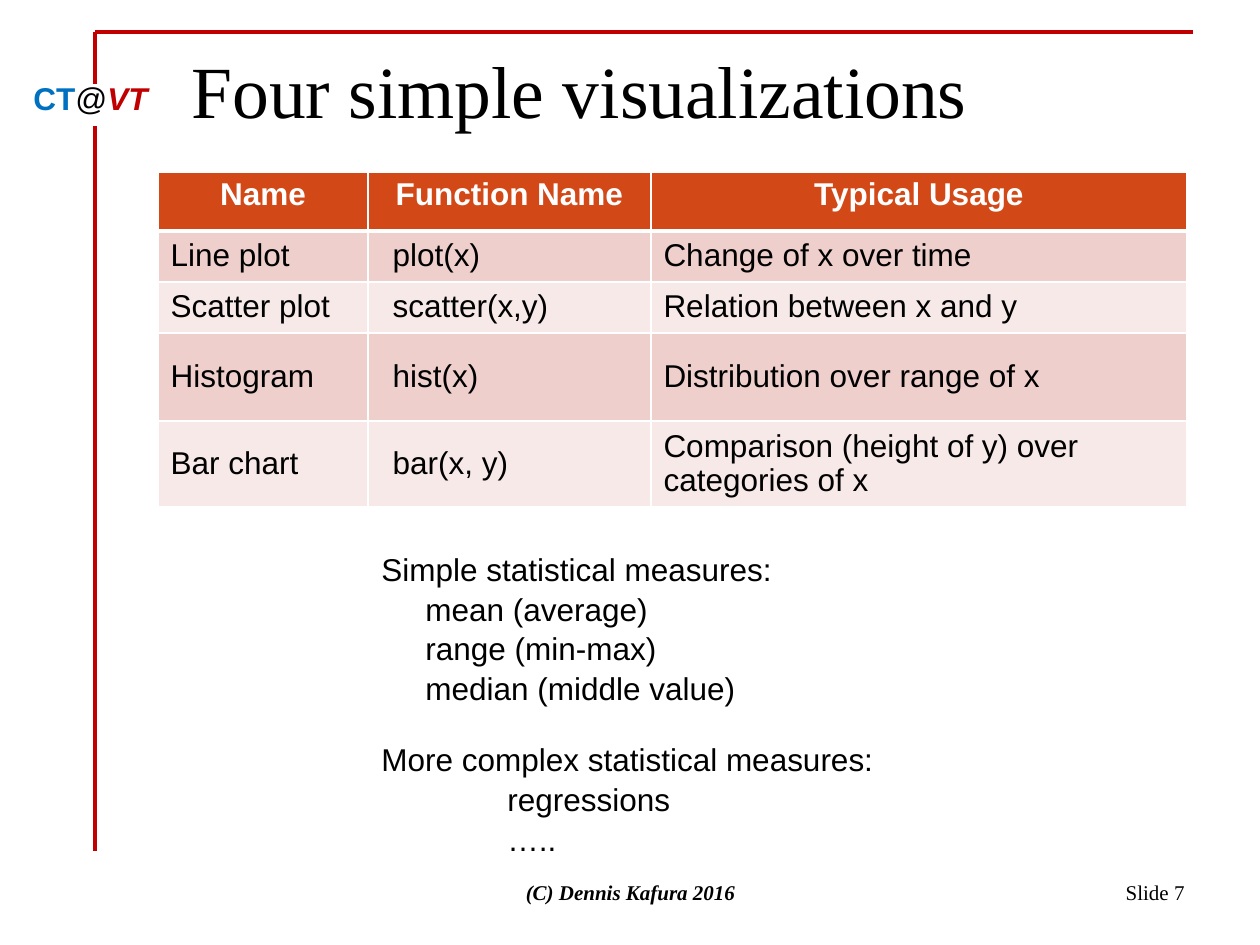
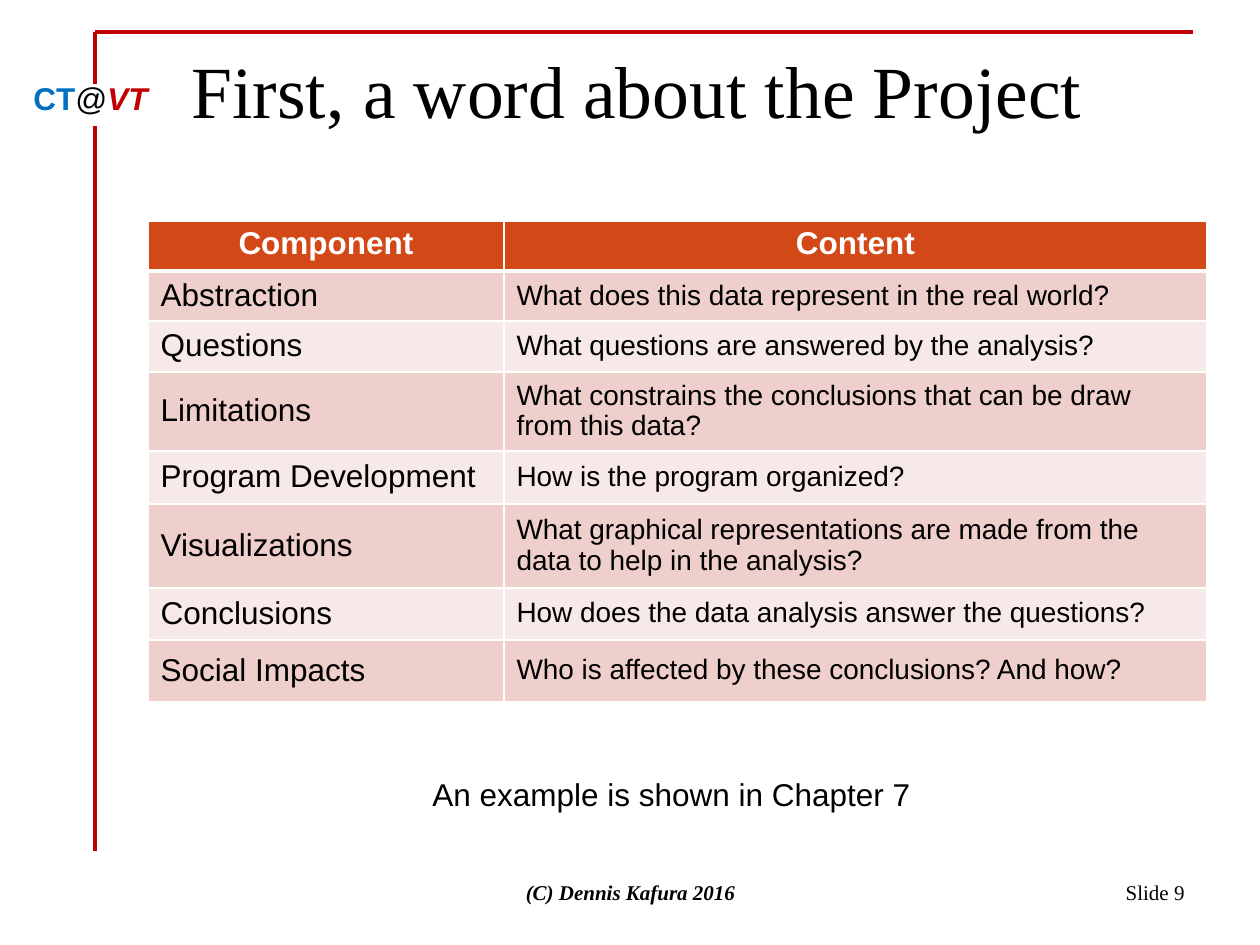
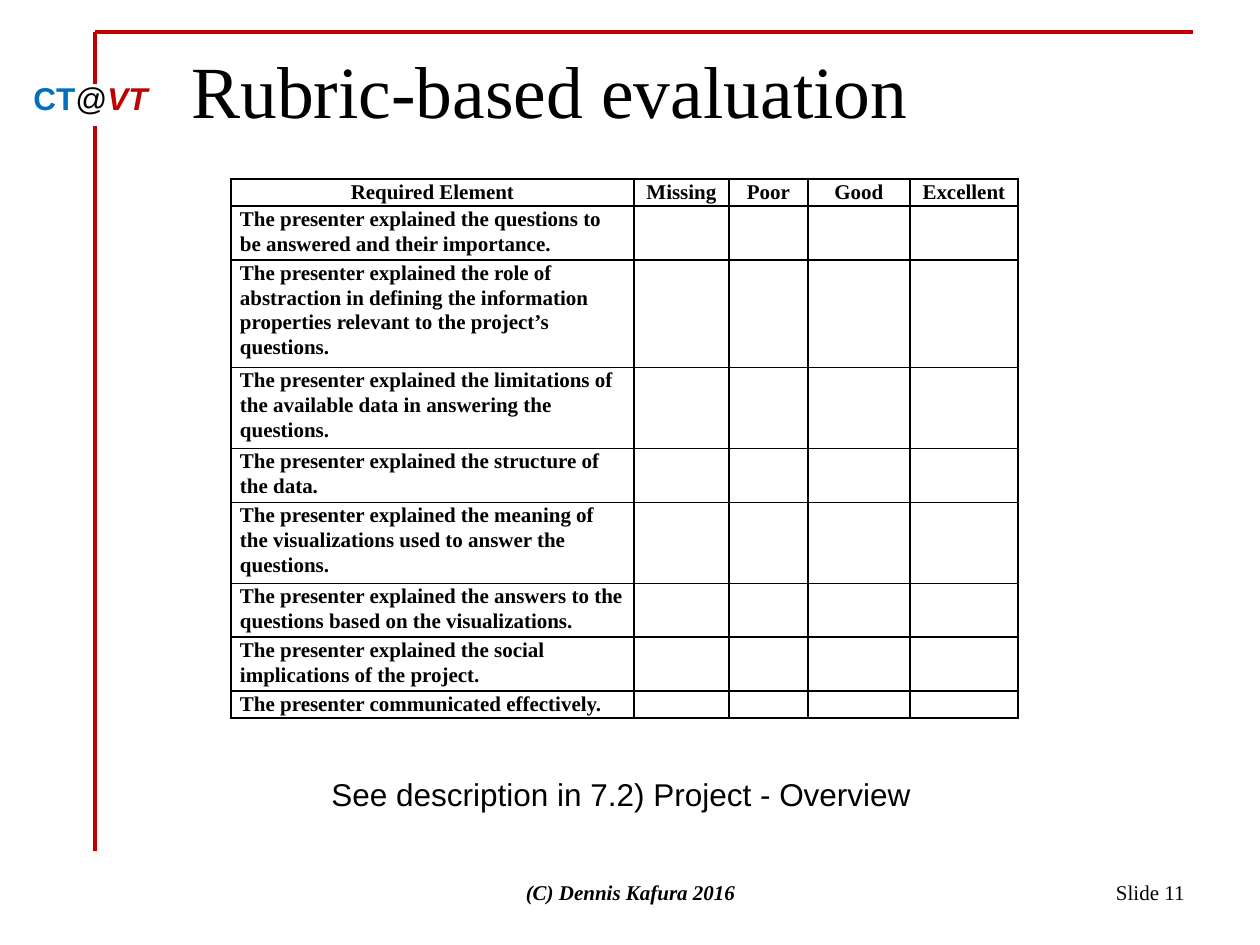
from lxml.etree import SubElement
from pptx import Presentation
from pptx.dml.color import RGBColor
from pptx.enum.shapes import MSO_CONNECTOR
from pptx.enum.text import MSO_ANCHOR, MSO_AUTO_SIZE, PP_ALIGN
from pptx.oxml.ns import qn
from pptx.util import Emu, Pt

COLORS = {"red": "C00000", "blue": "0070C0", "black": "000000", "white": "FFFFFF",
          "header": "D34817", "odd": "EFCFCC", "even": "F7E9E8"}
SANS, SERIF = "Arial", "Times New Roman"
FOOTER = "(C) Dennis Kafura 2016"
FRAME_LINES = [(95, 32, 1193, 32, 2), (95, 32, 95, 84, 1.75), (95, 126, 95, 851, 1.75)]
BADGE = [("CT", dict(color="blue", bold=True)), ("@", {}),
         ("VT", dict(color="red", bold=True, italic=True))]

PLOTS = dict(
    left=158, top=172, cols=[210, 283, 536], rows=[59, 51, 51, 88, 83],
    formats=[{}, dict(indent=12), {}],
    cells=[("Name", "Function Name", "Typical Usage"),
           ("Line plot", "plot(x)", "Change of x over time"),
           ("Scatter plot", "scatter(x,y)", "Relation between x and y"),
           ("Histogram", "hist(x)", "Distribution over range of x"),
           ("Bar chart", "bar(x, y)", "Comparison (height of y) over categories of x")])
COMPONENTS = dict(
    left=148, top=221, cols=[356, 703], rows=[50, 50, 51, 79, 53, 84, 52, 62],
    formats=[{}, dict(size=16)],
    cells=[("Component", "Content"),
           ("Abstraction", "What does this data represent in the real world?"),
           ("Questions", "What questions are answered by the analysis?"),
           ("Limitations", "What constrains the conclusions that can be draw from this data?"),
           ("Program Development", "How is the program organized?"),
           ("Visualizations", "What graphical representations are made from the data "
                              "to help in the analysis?"),
           ("Conclusions", "How does the data analysis answer the questions?"),
           ("Social Impacts", "Who is affected by these conclusions? And how?")])
GRADES = ("Required Element", "Missing", "Poor", "Good", "Excellent")
CRITERIA = [
    ("The presenter explained the questions to be answered and their importance.", 2),
    ("The presenter explained the role of abstraction in defining the information "
     "properties relevant to the project’s questions.", 4),
    ("The presenter explained the limitations of the available data in answering "
     "the questions.", 3),
    ("The presenter explained the structure of the data.", 2),
    ("The presenter explained the meaning of the visualizations used to answer "
     "the questions.", 3),
    ("The presenter explained the answers to the questions based on the visualizations.", 2),
    ("The presenter explained the social implications of the project.", 2),
    ("The presenter communicated effectively.", 1)]
RUBRIC = dict(
    left=231, top=179, cols=[403, 95, 79, 102, 108],
    rows=[25] + [25 * lines for _, lines in CRITERIA],
    cells=[GRADES] + [(criterion, "", "", "", "") for criterion, _ in CRITERIA])

MEASURES = [("Simple statistical measures:", {}),
            ("mean (average)", dict(indent=44)),
            ("range (min-max)", dict(indent=44)),
            ("median (middle value)", dict(indent=44)),
            ("More complex statistical measures:", dict(before=18)),
            ("regressions", dict(indent=126)),
            ("…..", dict(indent=126))]


def px(n):
    return Emu(round(n * 914400 / 126))


def rgb(name):
    return RGBColor.from_string(COLORS[name])


def write(p, text, size=18, font=SANS, color="black", bold=False, italic=False,
          align=PP_ALIGN.LEFT, spacing=None, indent=0, before=0):
    p.alignment = align
    if spacing:
        p.line_spacing = spacing
    if indent:
        p._p.get_or_add_pPr().set("marL", str(px(indent)))
    if before:
        p.space_before = Pt(before)
    r = p.add_run()
    r.text = text
    r.font.size, r.font.name = Pt(size), font
    r.font.bold, r.font.italic = bold, italic
    r.font.color.rgb = rgb(color)


def add_box(s, x, y, w, h, anchor=MSO_ANCHOR.TOP):
    tf = s.shapes.add_textbox(px(x), px(y), px(w), px(h)).text_frame
    tf.word_wrap = True
    tf.vertical_anchor = anchor
    return tf


def add_lines(s, x, y, w, h, lines):
    tf = add_box(s, x, y, w, h)
    for i, (text, fmt) in enumerate(lines):
        p = tf.add_paragraph() if i else tf.paragraphs[0]
        write(p, text, spacing=1.05, **fmt)


def add_slide(prs, title, number):
    s = prs.slides.add_slide(prs.slide_layouts[5])
    for x1, y1, x2, y2, width in FRAME_LINES:
        line = s.shapes.add_connector(MSO_CONNECTOR.STRAIGHT, px(x1), px(y1), px(x2), px(y2))
        line.line.color.rgb = rgb("red")
        line.line.width = Pt(width)
        SubElement(line._element.spPr, qn("a:effectLst"))
    p = add_box(s, 21, 73, 150, 50).paragraphs[0]
    for text, fmt in BADGE:
        write(p, text, **fmt)

    sp = s.shapes.title
    sp.left, sp.top, sp.width, sp.height = px(179), px(38), px(1018), px(98)
    tf = sp.text_frame
    tf.auto_size = MSO_AUTO_SIZE.NONE
    tf.vertical_anchor = MSO_ANCHOR.BOTTOM
    tf.margin_bottom = px(3)
    write(tf.paragraphs[0], title, size=42, font=SERIF)

    write(add_box(s, 903, 861, 294, 63, MSO_ANCHOR.MIDDLE).paragraphs[0], f"Slide {number}",
          size=12, font=SERIF, align=PP_ALIGN.RIGHT)
    write(add_box(s, 431, 861, 399, 63, MSO_ANCHOR.MIDDLE).paragraphs[0], FOOTER,
          size=12, font=SERIF, bold=True, italic=True, align=PP_ALIGN.CENTER)
    return s


def set_borders(cell, color, bottom=1):
    tcPr = cell._tc.get_or_add_tcPr()
    for side, width in zip("LRTB", (1, 1, 1, bottom)):
        ln = SubElement(tcPr, qn(f"a:ln{side}"), w=str(Pt(width)))
        SubElement(SubElement(ln, qn("a:solidFill")), qn("a:srgbClr"), val=COLORS[color])


def add_grid(s, left, top, cols, rows, cells):
    table = s.shapes.add_table(len(rows), len(cols), px(left), px(top),
                               px(sum(cols)), px(sum(rows))).table
    table.first_row = table.horz_banding = False
    for column, width in zip(table.columns, cols):
        column.width = px(width)
    for row, height in zip(table.rows, rows):
        row.height = px(height)
    for i, texts in enumerate(cells):
        for j, text in enumerate(texts):
            yield i, j, table.cell(i, j), text


def add_banded_table(s, formats, **grid):
    for i, j, cell, text in add_grid(s, **grid):
        set_borders(cell, "white", bottom=1 if i else 3)
        cell.fill.solid()
        cell.fill.fore_color.rgb = rgb(("odd" if i % 2 else "even") if i else "header")
        cell.vertical_anchor = MSO_ANCHOR.MIDDLE if i else MSO_ANCHOR.TOP
        fmt = formats[j] if i else dict(color="white", bold=True, align=PP_ALIGN.CENTER)
        write(cell.text_frame.paragraphs[0], text, spacing=0.97, **fmt)


def add_rubric(s, **grid):
    for i, j, cell, text in add_grid(s, **grid):
        set_borders(cell, "black")
        cell.fill.background()
        cell.margin_left = cell.margin_right = px(9)
        cell.margin_top = cell.margin_bottom = 0
        p = cell.text_frame.paragraphs[0]
        if text:
            write(p, text, size=12, font=SERIF, bold=True, spacing=1.07,
                  align=PP_ALIGN.LEFT if i else PP_ALIGN.CENTER)
        else:
            SubElement(p._p, qn("a:endParaRPr"), sz="1200")


def main():
    prs = Presentation()
    prs.slide_width, prs.slide_height = px(1260), px(945)

    s = add_slide(prs, "Four simple visualizations", 7)
    add_banded_table(s, **PLOTS)
    add_lines(s, 369, 542, 522, 318, MEASURES)

    s = add_slide(prs, "First, a word about the Project", 9)
    add_banded_table(s, **COMPONENTS)
    add_lines(s, 420, 767, 525, 63, [("An example is shown in Chapter 7", {})])

    s = add_slide(prs, "Rubric-based evaluation", 11)
    add_rubric(s, **RUBRIC)
    add_lines(s, 319, 767, 620, 50, [("See description in 7.2) Project - Overview", {})])

    prs.save("out.pptx")


if __name__ == "__main__":
    main()
